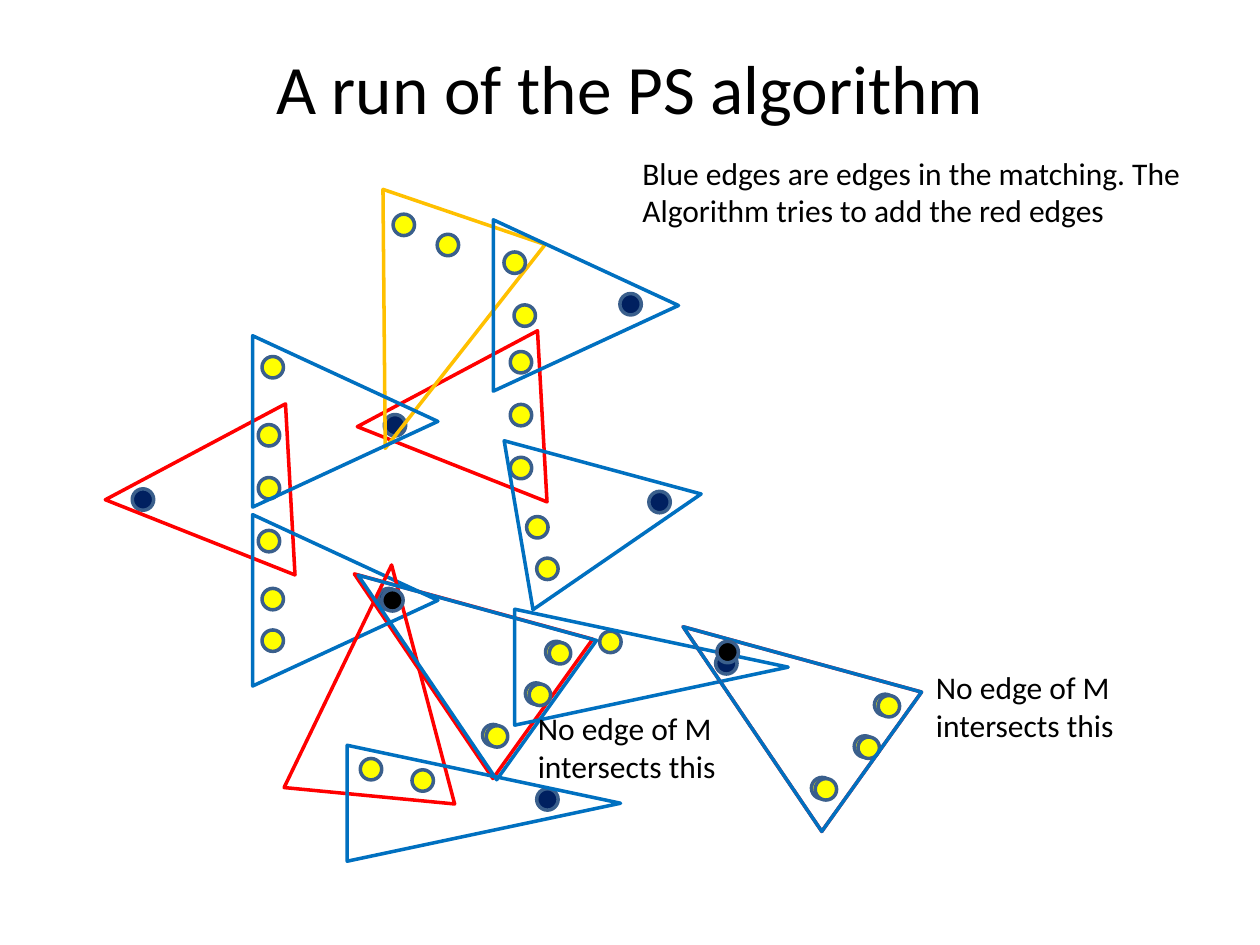
from pptx import Presentation
from pptx.dml.color import RGBColor
from pptx.enum.shapes import MSO_SHAPE
from pptx.enum.text import MSO_ANCHOR, MSO_AUTO_SIZE, PP_ALIGN
from pptx.util import Pt

EMU_PER_PX = 9144
RED, BLUE, GOLD = "FF0000", "0070C0", "FFC000"
YELLOW, NAVY, BLACK, RIM = "FFFF00", "002060", "000000", "3A5F8C"
DOT = 17


def px(length):
    return length * EMU_PER_PX


def color(value):
    return RGBColor.from_string(value)


class Board:
    def __init__(self, slide):
        self.slide = slide
        self.font = "Calibri"
        self.stroke = Pt(2)

    def outline(self, shape, stroke):
        shape.shadow.inherit = False
        shape.line.color.rgb = color(stroke)
        shape.line.width = self.stroke

    def vertex(self, edge, left, top, fill):
        dot = edge.shapes.add_shape(MSO_SHAPE.OVAL, px(left), px(top), px(DOT), px(DOT))
        self.outline(dot, RIM)
        dot.fill.solid()
        dot.fill.fore_color.rgb = color(fill)

    def triangle(self, edge, box, rotation, stroke):
        outline = edge.shapes.add_shape(MSO_SHAPE.ISOSCELES_TRIANGLE, *map(px, box))
        outline.rotation = rotation
        self.outline(outline, stroke)
        outline.fill.background()

    def hyperedge(self, box, rotation, stroke, yellow=(), navy=(), black=()):
        edge = self.slide.shapes.add_group_shape()
        for fill, places in ((NAVY, navy), (YELLOW, yellow)):
            for left, top in places:
                self.vertex(edge, left, top, fill)
        self.triangle(edge, box, rotation, stroke)
        for left, top in black:
            self.vertex(edge, left, top, BLACK)

    def column_edge(self, left, top, navy):
        yellow = [(left + 116, top + 18 + 42 * row) for row in range(3)]
        self.hyperedge((left, top, 136, 147), 266.8, RED, yellow, [navy])

    def slanted_edge(self, left, top, stroke, shift=0, black=()):
        yellow = [(left + x + shift, top + y + shift // 3)
                  for x, y in ((145, 92), (129, 125), (95, 158))]
        self.hyperedge((left, top, 136, 184), 305.6, stroke, yellow, black=black)

    def text(self, box, lines, size=18, title=False):
        area = self.slide.shapes.add_textbox(*map(px, box))
        frame = area.text_frame
        frame.word_wrap = title
        if title:
            frame.vertical_anchor = MSO_ANCHOR.MIDDLE
        else:
            frame.auto_size = MSO_AUTO_SIZE.SHAPE_TO_FIT_TEXT
        for index, line in enumerate(lines):
            paragraph = frame.add_paragraph() if index else frame.paragraphs[0]
            paragraph.alignment = PP_ALIGN.CENTER if title else PP_ALIGN.LEFT
            run = paragraph.add_run()
            run.text = line
            run.font.name = self.font
            run.font.size = Pt(size)
            run.font.color.rgb = color(BLACK)


def main():
    deck = Presentation()
    deck.slide_width, deck.slide_height = px(1000), px(750)
    board = Board(deck.slides.add_slide(deck.slide_layouts[6]))
    unmatched = ["No edge of M", "intersects this"]

    board.text((50, 30, 900, 78), ["A run of the PS algorithm"], 39.6, title=True)
    board.column_edge(89, 319, navy=(105, 388))
    board.column_edge(289, 261, navy=(305, 329))
    board.slanted_edge(288, 417, RED)
    board.hyperedge((269, 167, 136, 194), 198.8, GOLD, [(347, 186), (312, 170)])
    board.hyperedge((206, 403, 136, 147), 90, BLUE, [(208, 500), (208, 467)], [(300, 467)])
    board.hyperedge((206, 261, 136, 147), 90, BLUE, [(208, 283)])
    board.hyperedge((416, 331, 136, 147), 80.3, BLUE, [(426, 443), (418, 410)], [(515, 390)])
    board.hyperedge((397, 169, 136, 147), 90, BLUE, [(400, 200), (408, 242)], [(492, 233)])
    board.hyperedge((471, 421, 92, 217), 90, BLUE, [(476, 501)], [(568, 518)])
    board.hyperedge((234, 448, 136, 184), 5.5, RED, [(286, 602), (327, 611)])
    board.hyperedge((338, 529, 92, 217), 90, BLUE, navy=[(426, 626)])
    board.text((733, 525, 166, 71), unmatched)
    board.slanted_edge(549, 459, RED)
    board.slanted_edge(549, 459, BLUE, shift=3, black=[(569, 509)])
    board.slanted_edge(291, 418, BLUE, black=[(303, 468)])
    board.text((417, 558, 166, 71), unmatched)
    board.text((500, 117, 453, 71), ["Blue edges are edges in the matching. The",
                                     "Algorithm tries to add the red edges"])
    deck.save("out.pptx")


if __name__ == "__main__":
    main()
